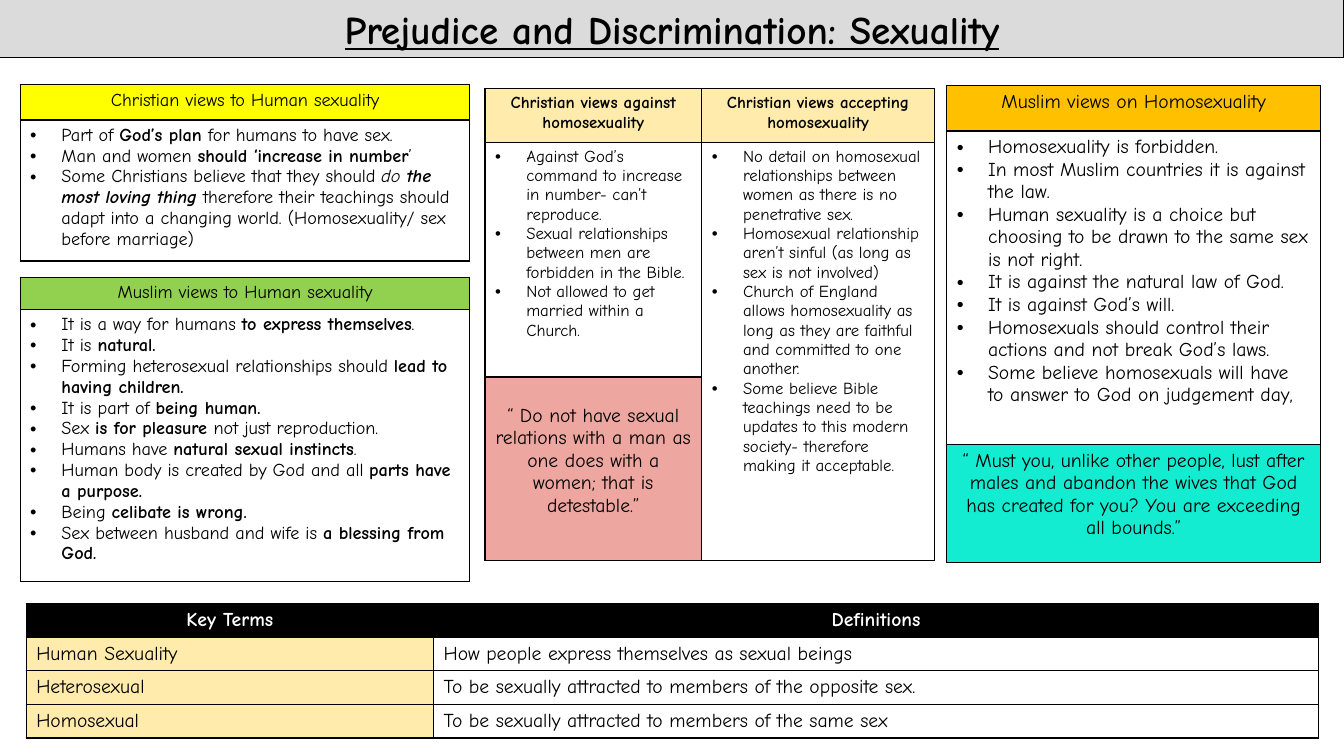
from dataclasses import dataclass

from lxml import etree
from pptx import Presentation
from pptx import util as u
from pptx.dml import color
from pptx.enum import shapes, text
from pptx.oxml import ns


@dataclass(frozen=True)
class Theme:
    font: str = "Comic Neue"
    black: str = "000000"
    white: str = "FFFFFF"
    banner: str = "DBDBDB"
    yellow: str = "FFFF00"
    green: str = "92D050"
    cream: str = "FFEBAB"
    rose: str = "EEA7A0"
    amber: str = "FFC000"
    teal: str = "14ECD2"
    title: int = 28
    large: int = 14
    medium: int = 13
    small: int = 12
    border: float = 1
    indent: float = 3.1


@dataclass(frozen=True)
class Cell:
    lines: tuple
    fill: str
    ink: str = Theme.black
    centred: bool = False
    drop: float = 0.5


class Board:
    """Draws on one slide, measuring in grid columns and rows of a tenth of an inch."""

    def __init__(self, slide, theme):
        self.slide = slide
        self.theme = theme

    def grid(self, count):
        return u.Inches(count / 10)

    def style(self, run, size, ink, bold=False, italic=False):
        run.font.name = self.theme.font
        run.font.size = u.Pt(size)
        run.font.color.rgb = color.RGBColor.from_string(ink)
        run.font.bold = bold
        run.font.italic = italic

    def add_runs(self, paragraph, marked, size, ink):
        bold = italic = False
        for bold_part in marked.split("*"):
            for index, italic_part in enumerate(bold_part.split("_")):
                if index:
                    italic = not italic
                if italic_part:
                    run = paragraph.add_run()
                    run.text = italic_part
                    self.style(run, size, ink, bold, italic)
            bold = not bold

    def bullet(self, paragraph):
        props = paragraph._p.get_or_add_pPr()
        indent = self.grid(self.theme.indent)
        props.set("marL", str(indent))
        props.set("indent", str(-indent))
        etree.SubElement(props, ns.qn("a:buFont")).set("typeface", "Arial")
        etree.SubElement(props, ns.qn("a:buChar")).set("char", "•")

    def outline(self, cell):
        props = cell._tc.get_or_add_tcPr()
        for side in ("a:lnL", "a:lnR", "a:lnT", "a:lnB"):
            line = etree.SubElement(props, ns.qn(side))
            line.set("w", str(u.Pt(self.theme.border)))
            fill = etree.SubElement(line, ns.qn("a:solidFill"))
            etree.SubElement(fill, ns.qn("a:srgbClr")).set("val", self.theme.black)

    def banner(self, wording, width, height):
        bar = self.slide.shapes.add_shape(
            shapes.MSO_SHAPE.RECTANGLE, 0, 0, self.grid(width), self.grid(height))
        bar.shadow.inherit = False
        bar.fill.solid()
        bar.fill.fore_color.rgb = color.RGBColor.from_string(self.theme.banner)
        bar.line.color.rgb = color.RGBColor.from_string(self.theme.black)
        bar.line.width = u.Pt(0.75)
        bar.text_frame.text = wording
        bar.text_frame.vertical_anchor = text.MSO_ANCHOR.MIDDLE
        heading = bar.text_frame.paragraphs[0]
        heading.alignment = text.PP_ALIGN.CENTER
        self.style(heading.runs[0], self.theme.title, self.theme.black, bold=True)
        heading.runs[0].font.underline = True

    def fill_cell(self, target, content, size):
        self.outline(target)
        target.fill.solid()
        target.fill.fore_color.rgb = color.RGBColor.from_string(content.fill)
        target.margin_top = self.grid(content.drop)
        for index, line in enumerate(content.lines):
            frame = target.text_frame
            paragraph = frame.add_paragraph() if index else frame.paragraphs[0]
            if content.centred:
                paragraph.alignment = text.PP_ALIGN.CENTER
            if len(content.lines) > 1:
                self.bullet(paragraph)
            self.add_runs(paragraph, line, size, content.ink)

    def table(self, left, top, widths, heights, rows, sizes):
        table = self.slide.shapes.add_table(
            len(heights), len(widths), self.grid(left), self.grid(top),
            self.grid(sum(widths)), self.grid(sum(heights))).table
        table.first_row = table.horz_banding = False
        for column, width in zip(table.columns, widths):
            column.width = self.grid(width)
        for r, (height, row, size) in enumerate(zip(heights, rows, sizes)):
            table.rows[r].height = self.grid(height)
            for c, content in enumerate(row):
                if content:
                    self.fill_cell(table.cell(r, c), content, size)
                else:
                    self.outline(table.cell(r, c))
                    table.cell(r - 1, c).merge(table.cell(r, c))


CHRISTIAN_VIEWS = (
    "Part of *God’s plan *for humans to have sex.",
    "Man and women *should ‘increase in number*’",
    "Some Christians believe that they should _do *the most loving thing *_therefore "
    "their teachings should adapt into a changing world. (Homosexuality/ sex before marriage)",
)
MUSLIM_VIEWS = (
    "It is a way for humans *to express themselves*.",
    "It is *natural.*",
    "Forming heterosexual relationships should *lead to having children.*",
    "It is part of *being human.*",
    "Sex *is for pleasure *not just reproduction.",
    "Humans have *natural sexual instincts*.",
    "Human body is created by God and all *parts have a purpose.*",
    "Being *celibate is wrong.*",
    "Sex between husband and wife is *a blessing from God.*",
)
AGAINST = (
    "Against God’s command to increase in number- can’t reproduce.",
    "Sexual relationships between men are forbidden in the Bible.",
    "Not allowed to get married within a Church.",
)
ACCEPTING = (
    "No detail on homosexual relationships between women as there is no penetrative sex.",
    "Homosexual relationship aren’t sinful (as long as sex is not involved)",
    "Church of England allows homosexuality as long as they are faithful and committed "
    "to one another.",
    "Some believe Bible teachings need to be updates to this modern society- therefore "
    "making it acceptable.",
)
MUSLIM_HOMOSEXUALITY = (
    "Homosexuality is forbidden.",
    "In most Muslim countries it is against the law.",
    "Human sexuality is a choice but choosing to be drawn to the same sex is not right.",
    "It is against the natural law of God.",
    "It is against God’s will.",
    "Homosexuals should control their actions and not break God’s laws.",
    "Some believe homosexuals will have to answer to God on judgement day,",
)
BIBLE_QUOTE = ("“ Do not have sexual relations with a man as one does with a women; "
               "that is detestable.”")
QURAN_QUOTE = ("“ Must you, unlike other people, lust after males and abandon the wives "
               "that God has created for you? You are exceeding all bounds.”")
KEY_TERMS = (
    ("Human Sexuality", "How people express themselves as sexual beings"),
    ("Heterosexual", "To be sexually attracted to members of the opposite sex."),
    ("Homosexual", "To be sexually attracted to members of the same sex"),
)


def main():
    theme = Theme()
    deck = Presentation()
    deck.slide_width, deck.slide_height = u.Inches(13.33), u.Inches(7.5)
    board = Board(deck.slides.add_slide(deck.slide_layouts[6]), theme)

    def head(wording, fill, ink=theme.black, drop=0.5):
        return Cell((wording,), fill, ink, True, drop)

    board.banner("Prejudice and Discrimination: Sexuality", 133.3, 5.7)
    for top, heights, heading, fill, views in (
            (8.4, (3.5, 14), "Christian views to Human sexuality", theme.yellow, CHRISTIAN_VIEWS),
            (27.5, (3.2, 27), "Muslim views to Human sexuality", theme.green, MUSLIM_VIEWS)):
        board.table(2, top, (44.6,), heights,
                    [[head(heading, fill)], [Cell(views, theme.white)]], [theme.medium] * 2)

    terms = [[head(f"*{name}*", theme.black, theme.white) for name in ("Key Terms", "Definitions")]]
    terms += [[Cell((term,), theme.cream), Cell((meaning,), theme.white)]
              for term, meaning in KEY_TERMS]
    board.table(2.6, 59.9, (40.4, 87.8), [3.33] * 4, terms, [theme.large] * 4)

    stances = [head(f"*Christian views {stance} homosexuality*", theme.cream)
               for stance in ("against", "accepting")]
    board.table(48.1, 8.8, (21.5, 23.1), (5.3, 23.3, 18.2),
                [stances, [Cell(AGAINST, theme.white), Cell(ACCEPTING, theme.white)],
                 [head(BIBLE_QUOTE, theme.rose, drop=2.75), None]],
                [theme.small, theme.small, theme.large])

    board.table(93.9, 8.5, (37.1,), (4.5, 31.1, 11.7),
                [[head("Muslim views on Homosexuality", theme.amber)],
                 [Cell(MUSLIM_HOMOSEXUALITY, theme.white)], [head(QURAN_QUOTE, theme.teal)]],
                [theme.large] * 3)
    deck.save("out.pptx")


if __name__ == "__main__":
    main()
